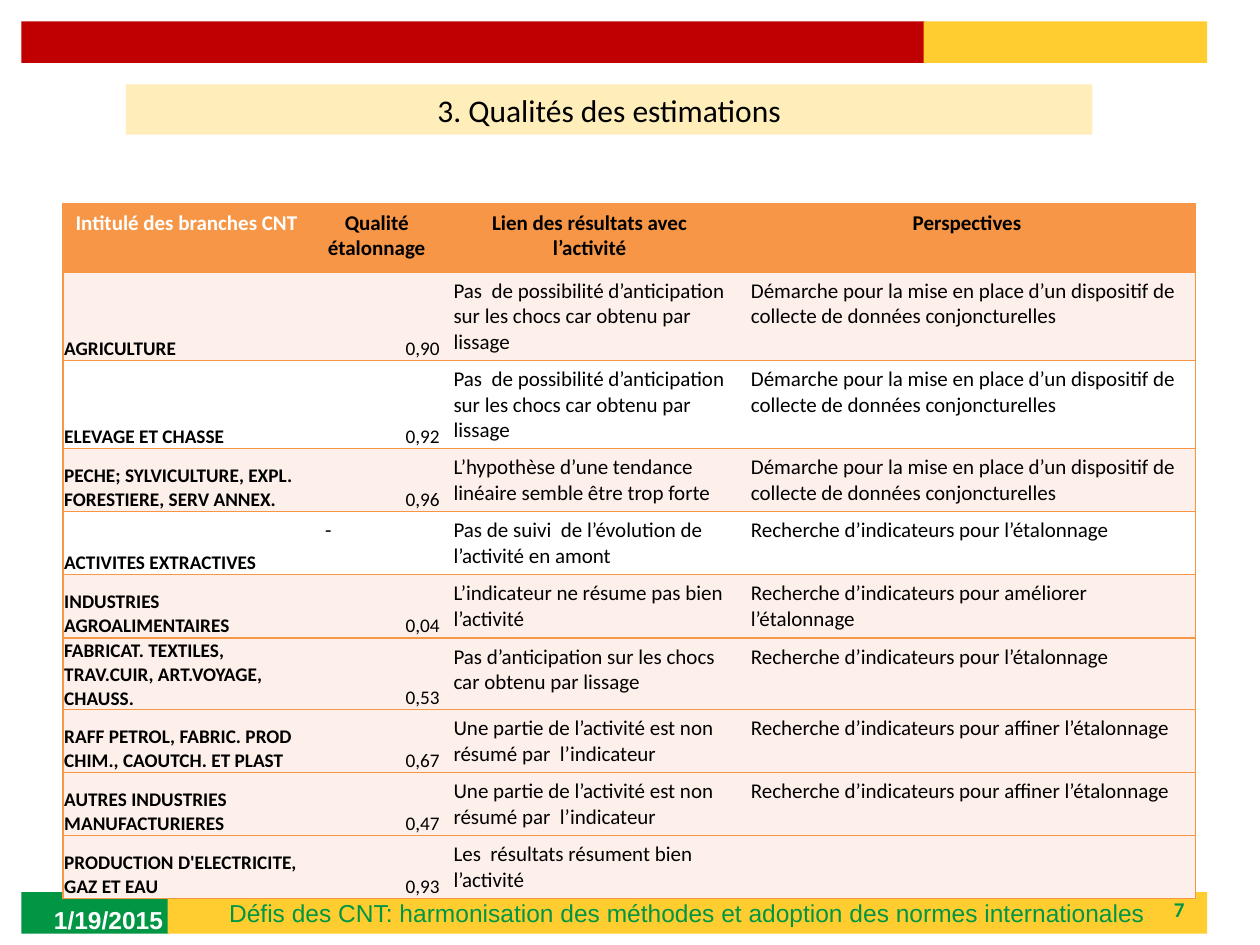
from lxml import etree
from pptx import Presentation
from pptx.dml.color import RGBColor
from pptx.enum.shapes import MSO_SHAPE
from pptx.enum.text import MSO_ANCHOR, PP_ALIGN
from pptx.oxml.ns import qn
from pptx.util import Inches, Pt

RECTANGLE = MSO_SHAPE.RECTANGLE
TOP, MIDDLE, BOTTOM = MSO_ANCHOR.TOP, MSO_ANCHOR.MIDDLE, MSO_ANCHOR.BOTTOM
LEFT, CENTER, RIGHT = PP_ALIGN.LEFT, PP_ALIGN.CENTER, PP_ALIGN.RIGHT

GREEN = RGBColor(0x00, 0x96, 0x44)
YELLOW = RGBColor(0xFF, 0xCD, 0x2F)
RED = RGBColor(0xC0, 0x00, 0x00)
CREAM = RGBColor(0xFF, 0xEE, 0xB9)
ORANGE = RGBColor(0xF7, 0x96, 0x46)
BLUSH = RGBColor(0xFD, 0xEF, 0xE9)
WHITE = RGBColor(0xFF, 0xFF, 0xFF)
BLACK = RGBColor(0x00, 0x00, 0x00)

TITLE = "3. Qualités des estimations"
FOOTER = "Défis des CNT: harmonisation des méthodes et adoption des normes internationales"
DATE = "1/19/2015"
PAGE_NUMBER = "7"

SMOOTHED = "Pas  de possibilité d’anticipation sur les chocs car obtenu par lissage"
PARTIAL = "Une partie de l’activité est non  résumé par  l’indicateur"
COLLECT = "Démarche pour la mise en place d’un dispositif de collecte de données conjoncturelles"
SEARCH = "Recherche d’indicateurs pour l’étalonnage"
REFINE = "Recherche d’indicateurs pour affiner l’étalonnage"

HEADERS = ["Intitulé des branches CNT", "Qualité étalonnage",
           "Lien des résultats avec l’activité", "Perspectives"]
BRANCHES = [
    ("AGRICULTURE", "0,90", SMOOTHED, COLLECT),
    ("ELEVAGE ET CHASSE", "0,92", SMOOTHED, COLLECT),
    ("PECHE; SYLVICULTURE, EXPL. FORESTIERE, SERV ANNEX.", "0,96",
     "L’hypothèse d’une tendance linéaire semble être trop forte", COLLECT),
    ("ACTIVITES EXTRACTIVES", "-",
     "Pas de suivi  de l’évolution de l’activité en amont", SEARCH),
    ("INDUSTRIES AGROALIMENTAIRES", "0,04",
     "L’indicateur ne résume pas bien l’activité",
     "Recherche d’indicateurs pour améliorer l’étalonnage"),
    ("FABRICAT. TEXTILES, TRAV.CUIR, ART.VOYAGE, CHAUSS.", "0,53",
     "Pas d’anticipation sur les chocs car obtenu par lissage", SEARCH),
    ("RAFF PETROL, FABRIC. PROD CHIM., CAOUTCH. ET PLAST", "0,67", PARTIAL, REFINE),
    ("AUTRES INDUSTRIES MANUFACTURIERES", "0,47", PARTIAL, REFINE),
    ("PRODUCTION D'ELECTRICITE, GAZ ET EAU", "0,93",
     "Les  résultats résument bien l’activité", ""),
]
WHITE_ROWS = {2, 4}
COLUMN_WIDTHS = [1.98, 1.02, 2.36, 3.63]
ROW_HEIGHTS = [0.54, 0.69, 0.69, 0.5, 0.5, 0.5, 0.57, 0.5, 0.5, 0.5]


def write(frame, text, size=12, font="Calibri", color=BLACK, bold=False, align=LEFT):
    para = frame.paragraphs[0]
    para.alignment = align
    span = para.add_run()
    span.text = text
    span.font.size = Pt(size)
    span.font.name = font
    span.font.bold = bold
    span.font.color.rgb = color


def add_bar(page, left, top, width, height, color):
    bar = page.shapes.add_shape(RECTANGLE, *map(Inches, (left, top, width, height)))
    bar.shadow.inherit = False
    bar.fill.solid()
    bar.fill.fore_color.rgb = color
    bar.line.fill.background()
    return bar.text_frame


def add_label(page, left, top, width, height, text, **style):
    frame = page.shapes.add_textbox(*map(Inches, (left, top, width, height))).text_frame
    frame.word_wrap = True
    frame.vertical_anchor = MIDDLE
    write(frame, text, **style)


def set_borders(cell, visible):
    properties = cell._tc.get_or_add_tcPr()
    for side in ("L", "R", "T", "B"):
        line = etree.SubElement(properties, qn(f"a:ln{side}"), w=str(Pt(1)))
        if side in visible:
            fill = etree.SubElement(line, qn("a:solidFill"))
            etree.SubElement(fill, qn("a:srgbClr"), val=str(ORANGE))
        else:
            etree.SubElement(line, qn("a:noFill"))


def format_cell(cell, text, row, column):
    sides = {0: "LTB", len(HEADERS) - 1: "RTB"}
    set_borders(cell, sides.get(column, "TB"))
    cell.fill.solid()
    if row == 0:
        cell.fill.fore_color.rgb = ORANGE
        style = dict(bold=True, color=BLACK if column else WHITE,
                     align=CENTER if column else LEFT)
    else:
        cell.fill.fore_color.rgb = WHITE if row in WHITE_ROWS else BLUSH
        style = {}
        if column < 2 and text != "-":
            cell.vertical_anchor = BOTTOM
            cell.margin_left = cell.margin_right = cell.margin_top = Inches(0.01)
            cell.margin_bottom = 0
            style = dict(size=11, bold=column == 0, align=RIGHT if column else LEFT)
    if text:
        write(cell.text_frame, text, **style)


def add_branch_table(page):
    rows = [HEADERS, *BRANCHES]
    table = page.shapes.add_table(
        len(rows), len(HEADERS), Inches(0.5), Inches(1.62),
        Inches(sum(COLUMN_WIDTHS)), Inches(sum(ROW_HEIGHTS))).table
    table.horz_banding = False
    for column, width in zip(table.columns, COLUMN_WIDTHS):
        column.width = Inches(width)
    for row, height in zip(table.rows, ROW_HEIGHTS):
        row.height = Inches(height)
    for row, texts in enumerate(rows):
        for column, text in enumerate(texts):
            format_cell(table.cell(row, column), text, row, column)


def main():
    deck = Presentation()
    deck.slide_width, deck.slide_height = Inches(10), Inches(7.5)
    page = deck.slides.add_slide(deck.slide_layouts[6])

    add_bar(page, 0.17, 7.08, 1.17, 0.33, GREEN)
    footer = add_bar(page, 1.33, 7.08, 8.25, 0.33, YELLOW)
    footer.vertical_anchor = MIDDLE
    write(footer, FOOTER, size=14, font="Arial", color=GREEN, align=CENTER)
    add_label(page, 7.17, 7.08, 2.33, 0.27, PAGE_NUMBER,
              color=GREEN, bold=True, align=RIGHT)
    add_bar(page, 0.17, 0.17, 7.17, 0.33, RED)
    add_bar(page, 7.33, 0.17, 2.25, 0.33, YELLOW)
    add_label(page, 0.33, 7.1, 2.33, 0.4, DATE,
              size=14, font="Arial", color=WHITE, bold=True)
    title = add_bar(page, 1, 0.67, 7.67, 0.4, CREAM)
    title.vertical_anchor = TOP
    write(title, TITLE, size=18, align=CENTER)
    add_branch_table(page)
    deck.save("out.pptx")


if __name__ == "__main__":
    main()
